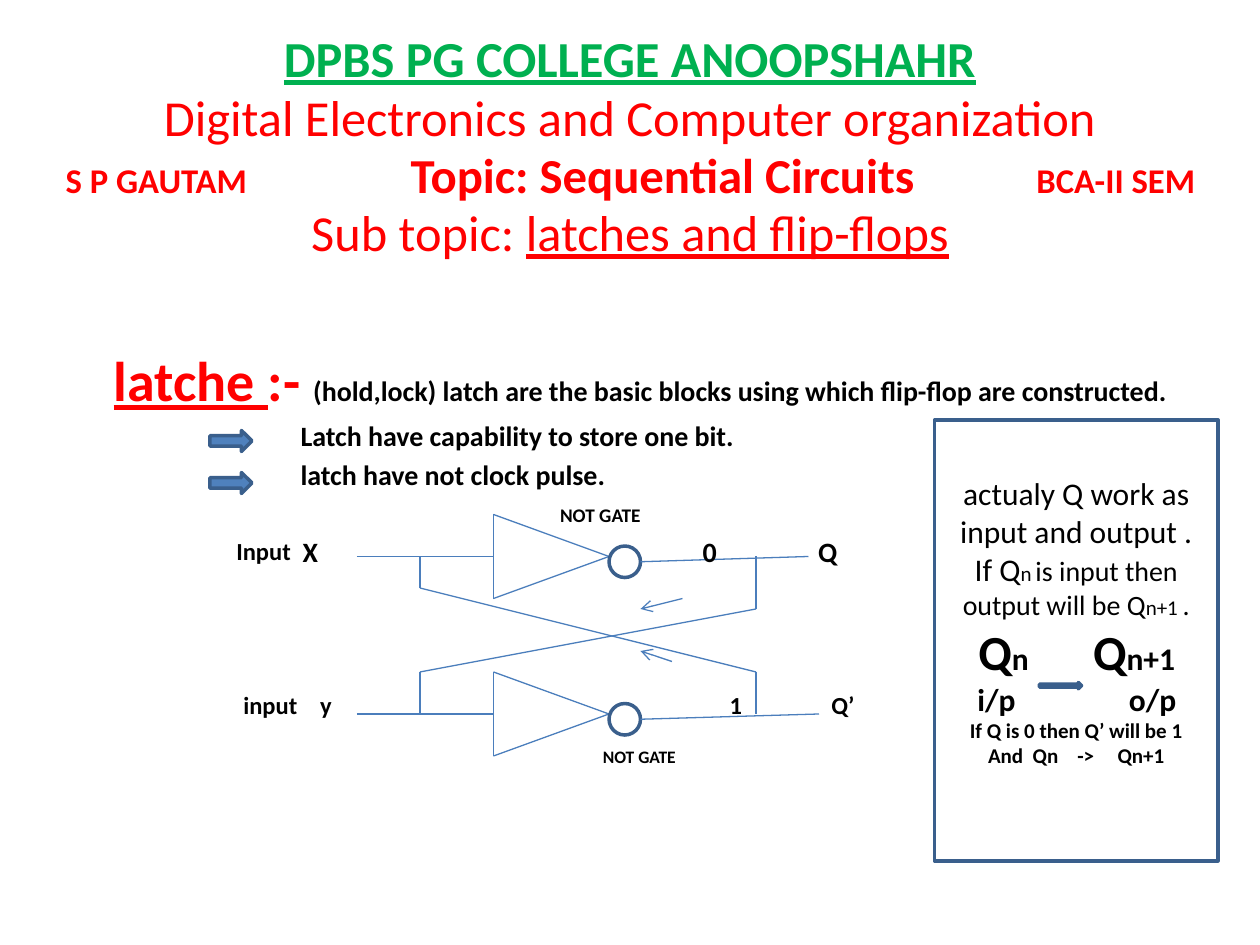
import pptx
import pptx.dml.color
import pptx.enum.shapes
import pptx.enum.text
import pptx.oxml.ns
import pptx.util
import lxml.etree

Pt = pptx.util.Pt
RGBColor = pptx.dml.color.RGBColor
Align = pptx.enum.text.PP_ALIGN
Anchor = pptx.enum.text.MSO_ANCHOR
Shape = pptx.enum.shapes.MSO_SHAPE
qn = pptx.oxml.ns.qn

RED = RGBColor(0xFF, 0x00, 0x00)
GREEN = RGBColor(0x00, 0xB0, 0x50)
BLACK = RGBColor(0x00, 0x00, 0x00)
WHITE = RGBColor(0xFF, 0xFF, 0xFF)
BLUE = RGBColor(0x4F, 0x81, 0xBD)
WIRE = RGBColor(0x4B, 0x7E, 0xBC)
OUTLINE = RGBColor(0x3A, 0x5F, 0x8C)
FONT = "Calibri"


def place(shape, box):
    shape.left, shape.top, shape.width, shape.height = map(Pt, box)


def set_font(font, size, color, bold=False, underline=False):
    font.name = FONT
    font.size = Pt(size)
    font.bold = bold
    font.underline = underline
    font.color.rgb = color


def add_paragraph(frame, first, align=Align.CENTER, tabs=()):
    para = frame.paragraphs[0] if first else frame.add_paragraph()
    para.alignment = align
    if tabs:
        stops = lxml.etree.SubElement(para._p.get_or_add_pPr(), qn("a:tabLst"))
        for position in tabs:
            lxml.etree.SubElement(stops, qn("a:tab"), pos=str(Pt(position)), algn="l")
    return para


def add_span(para, text, size, color, bold=False, underline=False):
    span = para.add_run()
    span.text = text
    set_font(span.font, size, color, bold, underline)


def add_preset(page, kind, box, fill):
    shape = page.shapes.add_shape(kind, *map(Pt, box))
    shape.shadow.inherit = False
    shape.fill.solid()
    shape.fill.fore_color.rgb = fill
    shape.line.color.rgb = OUTLINE
    shape.line.width = Pt(2)
    return shape


def add_wire(page, start, end, arrow=False):
    wire = page.shapes.add_connector(
        pptx.enum.shapes.MSO_CONNECTOR.STRAIGHT, *map(Pt, start + end))
    wire.line.color.rgb = WIRE
    wire.line.width = Pt(0.75)
    if arrow:
        lxml.etree.SubElement(wire.line._get_or_add_ln(), qn("a:tailEnd"), type="arrow")
    lxml.etree.SubElement(wire._element.spPr, qn("a:effectLst"))


def add_label(page, left, middle, text, size):
    height = size * 1.22
    label = page.shapes.add_textbox(
        Pt(left), Pt(middle - height / 2), Pt(len(text) * size * 0.7), Pt(height))
    frame = label.text_frame
    frame.margin_left = frame.margin_right = frame.margin_top = frame.margin_bottom = 0
    frame.word_wrap = False
    para = add_paragraph(frame, True, Align.LEFT)
    para.text = text
    set_font(para.font, size, BLACK, True)


def fill_title(page, box):
    title = page.shapes.title
    place(title, box)
    frame = title.text_frame
    frame.word_wrap = True
    frame.auto_size = pptx.enum.text.MSO_AUTO_SIZE.NONE
    frame.vertical_anchor = Anchor.MIDDLE
    lines = [
        (Align.CENTER, (), [("DPBS PG COLLEGE ANOOPSHAHR", 28.8, GREEN, True, True)]),
        (Align.CENTER, (), [("Digital Electronics and Computer organization", 28.8, RED)]),
        (Align.LEFT, (6.3, 203.5, 561), [
            ("\tS P GAUTAM", 19.8, RED, True),
            ("\tTopic: Sequential Circuits", 27.9, RED, True),
            ("\tBCA-II SEM", 19.8, RED, True)]),
        (Align.CENTER, (), [("Sub topic: ", 28.8, RED),
                            ("latches and flip-flops", 28.8, RED, False, True)]),
    ]
    for index, (align, tabs, spans) in enumerate(lines):
        para = add_paragraph(frame, index == 0, align, tabs)
        para.line_spacing = 0.97
        for span in spans:
            add_span(para, *span)


def fill_definition(page, box):
    body = page.placeholders[1]
    place(body, box)
    left, top = box[:2]
    frame = body.text_frame
    frame.word_wrap = True
    frame.auto_size = pptx.enum.text.MSO_AUTO_SIZE.NONE
    heading = add_paragraph(frame, True)
    heading.space_before = Pt(0)
    add_span(heading, "latche ", 32, RED, True, True)
    add_span(heading, ":- ", 32, RED, True)
    add_span(heading, "(hold,lock) latch are the basic blocks using which "
                      "flip-flop are constructed.", 16, BLACK, True)
    points = ["Latch have capability to store one bit.", "latch have not clock pulse."]
    for index, text in enumerate(points):
        para = add_paragraph(frame, False, Align.LEFT)
        properties = para._p.get_or_add_pPr()
        properties.set("marL", str(Pt(140.5)))
        properties.set("indent", "0")
        para.space_before = Pt(3)
        para.text = text
        set_font(para.font, 16, BLACK, True)
        add_preset(page, Shape.RIGHT_ARROW, (left + 96, top + 52 + 24 * index, 24, 12), BLUE)


def draw_gate(page, left, middle, output_end):
    back, tip = left + 78, left + 144
    upper, lower = (back, middle - 24), (back, middle + 24)
    point = (tip, middle)
    for start, end in [((left, middle), (back, middle)), (upper, lower),
                       (upper, point), (lower, point)]:
        add_wire(page, start, end)
    add_preset(page, Shape.OVAL, (tip, middle - 6, 18, 18), WHITE)
    add_wire(page, (tip + 18, middle + 3), (output_end, middle))


def draw_latch(page, box):
    left, top, width, height = box
    upper, lower = top + 24, top + height - 24
    near, far = left + 36, left + 228
    draw_gate(page, left, upper, left + width - 6)
    draw_gate(page, left, lower, left + width)
    feedback = [
        [(near, upper), (near, upper + 18), (far, lower - 24), (far, lower)],
        [(far, upper), (far, upper + 30), (near, lower - 24), (near, lower)],
    ]
    for route in feedback:
        for start, end in zip(route, route[1:]):
            add_wire(page, start, end)
    add_wire(page, (left + 186, upper + 24), (left + 162, upper + 30), True)
    add_wire(page, (left + 180, lower - 30), (left + 162, lower - 36), True)
    labels = [
        (116, 0, "NOT GATE", 11),
        (-69, 21, "Input", 14), (-31, 21, "X", 16), (197.5, 21, "0", 16), (263.5, 21, "Q", 16),
        (-65, 109, "input", 14), (-21, 109, "y", 14), (213, 109, "1", 14), (271, 109, "Q’", 14),
        (140.5, 138.5, "NOT GATE", 10),
    ]
    for offset, drop, text, size in labels:
        add_label(page, left + offset, top + drop, text, size)


def draw_note(page, box):
    left, top = box[:2]
    note = add_preset(page, Shape.RECTANGLE, box, WHITE)
    frame = note.text_frame
    frame.word_wrap = True
    frame.vertical_anchor = Anchor.MIDDLE
    frame.margin_bottom = Pt(25.6)
    lines = [
        ((), [("actualy Q work as input and output .", 18)]),
        ((), [("If Q", 18), ("n", 12), (" ", 10), ("is input then output will be Q", 16),
              ("n+1 ", 12), (".", 16)]),
        ((18, 83.5), [("\tQ", 28, True), ("n", 18, True), ("\tQ", 28, True),
                      ("n+1", 18, True)]),
        ((17.5, 104), [("\ti/p\to/p", 18, True)]),
        ((), [("If Q is 0 then Q’ will be 1", 12, True)]),
        ((23.5, 49, 74.5, 97.5), [("\tAnd\tQn\t->\tQn+1", 12, True)]),
    ]
    for index, (tabs, spans) in enumerate(lines):
        para = add_paragraph(frame, index == 0, Align.LEFT if tabs else Align.CENTER, tabs)
        for text, size, *bold in spans:
            add_span(para, text, size, BLACK, *bold)
    add_preset(page, Shape.RIGHT_ARROW, (left + 60, top + 150, 24, 3.6), BLUE)


def main():
    deck = pptx.Presentation()
    deck.slide_width, deck.slide_height = Pt(720), Pt(540)
    page = deck.slides.add_slide(deck.slide_layouts[0])
    fill_title(page, (24, 18, 672, 132))
    fill_definition(page, (24, 194, 684, 288))
    draw_latch(page, (204, 294, 264, 138))
    draw_note(page, (534, 240, 162, 252))
    deck.save("out.pptx")


if __name__ == "__main__":
    main()
